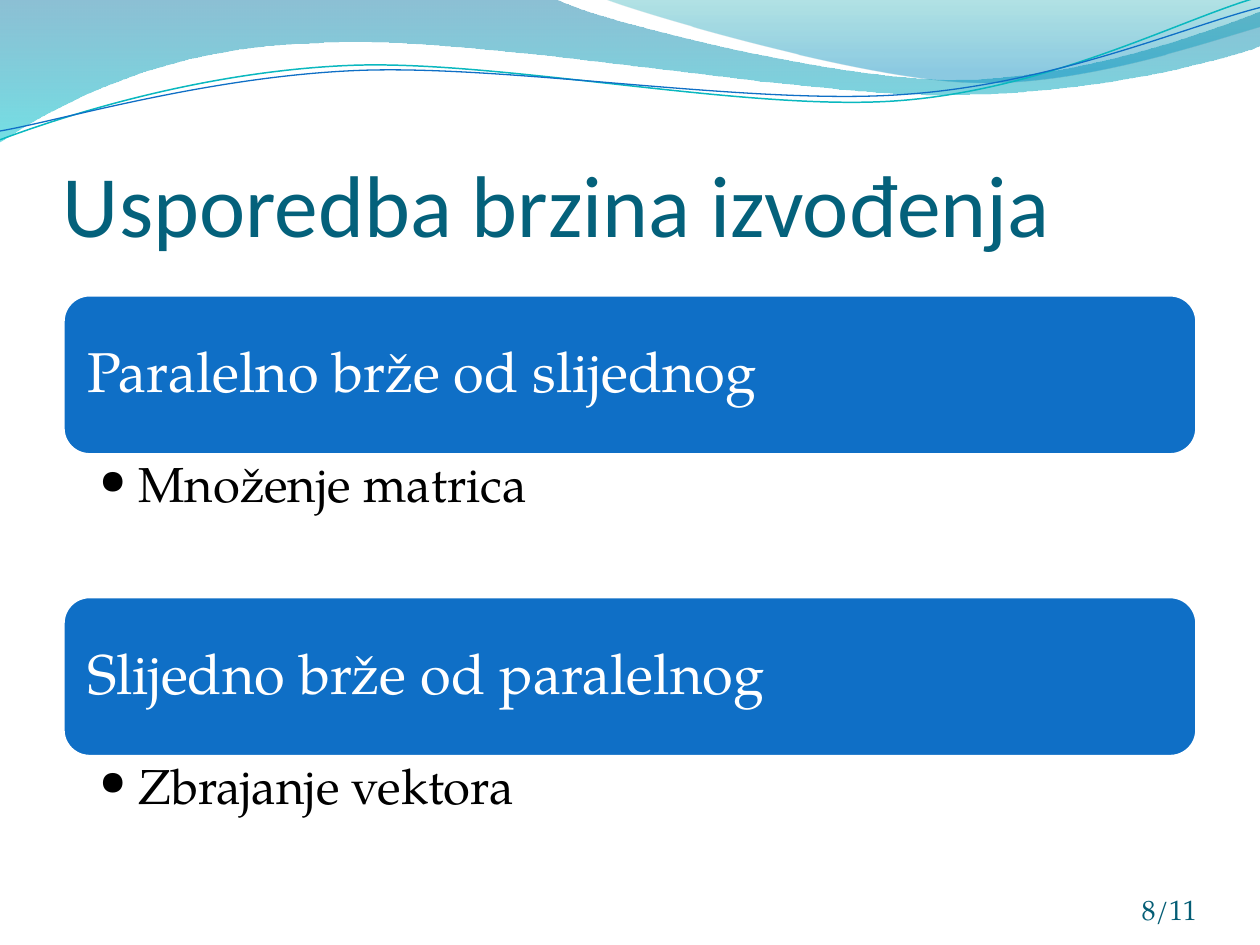
import dataclasses
import typing

import lxml.etree
import pptx
import pptx.dml.color
import pptx.enum.shapes
import pptx.enum.text
import pptx.oxml.ns
import pptx.util

COLS, ROWS = 100, 75
WIDTH, HEIGHT = pptx.util.Inches(10), pptx.util.Inches(7.5)
HEADING_FONT, BODY_FONT = "Calibri", "TeX Gyre Pagella"
COLORS = {
    "title": "04617B",
    "number": "045D75",
    "box": "0F6FC6",
    "white": "FFFFFF",
    "black": "000000",
    "teal": "0AB8BF",
    "deep": "0074A1",
    "aqua": "00C6CF",
    "sea": "00A1A9",
    "sky": "008BBF",
}
Point = tuple[float, float]
ANCHOR = pptx.enum.text.MSO_ANCHOR
ALIGN = pptx.enum.text.PP_ALIGN
qn = pptx.oxml.ns.qn


class Stop(typing.NamedTuple):
    position: float
    color: str
    opacity: int


class Box(typing.NamedTuple):
    col: float
    row: float
    cols: float
    rows: float


class Style(typing.NamedTuple):
    font: str
    size: float
    color: str
    anchor: ANCHOR = ANCHOR.TOP
    align: ALIGN = ALIGN.LEFT
    insets: tuple[float, float, float, float] = (0, 0, 0, 0)
    spacing: float = 1


@dataclasses.dataclass
class Wave:
    start: Point
    segments: list[list[Point]]
    stops: tuple[Stop, ...] = ()
    line: str = ""
    weight: float = 0


@dataclasses.dataclass
class Section:
    heading: str
    item: str


WAVES = [
    Wave(
        (0, 0),
        [
            [(44, -0.1)],
            [(47.6, 1.7), (66.4, 6.3), (75.8, 6.3)],
            [(85.3, 6.3), (95.8, 2.6), (100, 0.9)],
            [(100.1, 3.6)],
            [(98.3, 4.4), (87, 7.6), (74.6, 7.5)],
            [(62.2, 7.5), (38.2, 2.8), (25.7, 3.4)],
            [(12.9, 3.6), (4.6, 8.3), (-0.1, 11.3)],
            [(0, 0)],
        ],
        (Stop(0, "deep", 45), Stop(1, "aqua", 55)),
    ),
    Wave(
        (47.9, -0.1),
        [
            [(50.9, 1.1), (68.2, 6.2), (76.9, 6.5)],
            [(85.6, 6.9), (96.1, 3.2), (100, 2.1)],
            [(100, 0)],
            [(47.9, -0.1)],
        ],
        (Stop(0, "sea", 30), Stop(0.8, "sky", 45)),
    ),
    Wave(
        (0, 11.1),
        [
            [(4.8, 9.3), (15.8, 5.7), (27.7, 5.2)],
            [(39.5, 4.7), (59.3, 8.9), (71.3, 8)],
            [(83.3, 7.1), (93.8, 1.5), (99.8, -0.2)],
        ],
        line="teal",
        weight=0.85,
    ),
    Wave(
        (0, 10.4),
        [
            [(4.7, 9.6), (16.4, 6.1), (28.3, 5.6)],
            [(40.3, 5.1), (59.7, 8.4), (71.7, 7.5)],
            [(83.6, 6.7), (94.1, 2.1), (100, 0.6)],
        ],
        line="box",
        weight=0.75,
    ),
]
SECTIONS = [
    Section("Paralelno brže od slijednog", "Množenje matrica"),
    Section("Slijedno brže od paralelnog", "Zbrajanje vektora"),
]
TITLE = Style(HEADING_FONT, 50, "title", ANCHOR.BOTTOM, insets=(0, 0.5, 0, 0))
HEADING = Style(BODY_FONT, 32, "white", ANCHOR.MIDDLE, insets=(1.3, 1.3, 1.3, 1.3), spacing=0.9)
ITEM = Style(BODY_FONT, 28, "black", insets=(2.9, 0.4, 2.2, 0.4), spacing=0.9)
NUMBER = Style(BODY_FONT, 16, "number", ANCHOR.BOTTOM, ALIGN.RIGHT)
SECTION_TOP, HEADING_ROWS, ITEM_ROWS = 23.4, 12.7, 11.25


def x(cols: float) -> int:
    return round(WIDTH * cols / COLS)


def y(rows: float) -> int:
    return round(HEIGHT * rows / ROWS)


def rgb(name: str) -> pptx.dml.color.RGBColor:
    return pptx.dml.color.RGBColor.from_string(COLORS[name])


def place(box: Box) -> tuple[int, int, int, int]:
    return x(box.col), y(box.row), x(box.cols), y(box.rows)


def bend(sp: pptx.shapes.autoshape.Shape, segments: list[list[Point]]) -> None:
    lines = iter(list(sp._element.iter(qn("a:lnTo"))))
    for segment in segments:
        group = [next(lines) for _ in segment]
        if len(group) == 3:
            curve = lxml.etree.Element(qn("a:cubicBezTo"))
            group[0].addprevious(curve)
            for line in group:
                curve.append(line[0])
                line.getparent().remove(line)


def draw_wave(s: pptx.slide.Slide, wave: Wave) -> None:
    corners = [(x(c), y(r)) for segment in wave.segments for c, r in segment]
    builder = s.shapes.build_freeform(x(wave.start[0]), y(wave.start[1]), scale=1.0)
    builder.add_line_segments(corners, close=bool(wave.stops))
    sp = builder.convert_to_shape()
    bend(sp, wave.segments)
    sp.shadow.inherit = False
    if wave.line:
        sp.fill.background()
        sp.line.color.rgb = rgb(wave.line)
        sp.line.width = pptx.util.Pt(wave.weight)
        return
    sp.line.fill.background()
    sp.fill.gradient()
    sp.fill.gradient_angle = 270
    for gs, stop in zip(sp.fill.gradient_stops, wave.stops):
        gs.position = stop.position
        gs.color.rgb = rgb(stop.color)
    for clr, stop in zip(sp._element.spPr.iter(qn("a:srgbClr")), wave.stops):
        lxml.etree.SubElement(clr, qn("a:alpha"), val=str(stop.opacity * 1000))


def write(sp: pptx.shapes.autoshape.Shape, text: str, style: Style) -> pptx.text.text._Paragraph:
    tf = sp.text_frame
    tf.word_wrap = True
    tf.vertical_anchor = style.anchor
    left, top, right, bottom = style.insets
    tf.margin_left, tf.margin_right = x(left), x(right)
    tf.margin_top, tf.margin_bottom = y(top), y(bottom)
    p = tf.paragraphs[0]
    p.text = text
    p.alignment = style.align
    p.line_spacing = style.spacing
    p.font.name = style.font
    p.font.size = pptx.util.Pt(style.size)
    p.font.color.rgb = rgb(style.color)
    return p


def add_text(s: pptx.slide.Slide, box: Box, text: str, style: Style) -> pptx.text.text._Paragraph:
    return write(s.shapes.add_textbox(*place(box)), text, style)


def add_section(s: pptx.slide.Slide, section: Section, row: float) -> None:
    rounded = pptx.enum.shapes.MSO_SHAPE.ROUNDED_RECTANGLE
    sp = s.shapes.add_shape(rounded, *place(Box(5, row, 90, HEADING_ROWS)))
    sp.shadow.inherit = False
    sp.fill.solid()
    sp.fill.fore_color.rgb = rgb("box")
    sp.line.color.rgb = rgb("white")
    sp.line.width = pptx.util.Pt(2)
    write(sp, section.heading, HEADING)
    p = add_text(s, Box(5, row + HEADING_ROWS, 90, ITEM_ROWS), section.item, ITEM)
    pPr = p._p.get_or_add_pPr()
    pPr.set("marL", str(x(3.1)))
    pPr.set("indent", str(-x(3.1)))
    for tag, attrs in (("a:buFont", {"typeface": BODY_FONT}), ("a:buChar", {"char": "•"})):
        bullet = lxml.etree.Element(qn(tag), attrs)
        pPr.insert_element_before(bullet, "a:tabLst", "a:defRPr", "a:extLst")


def main() -> None:
    prs = pptx.Presentation()
    prs.slide_width, prs.slide_height = WIDTH, HEIGHT
    s = prs.slides.add_slide(prs.slide_layouts[6])
    for wave in WAVES:
        draw_wave(s, wave)
    add_text(s, Box(5, 7.7, 90, 12.5), "Usporedba brzina izvođenja", TITLE)
    for i, section in enumerate(SECTIONS):
        add_section(s, section, SECTION_TOP + i * (HEADING_ROWS + ITEM_ROWS))
    add_text(s, Box(86.7, 69.5, 8.3, 4), "8/11", NUMBER)
    prs.save("out.pptx")


if __name__ == "__main__":
    main()
